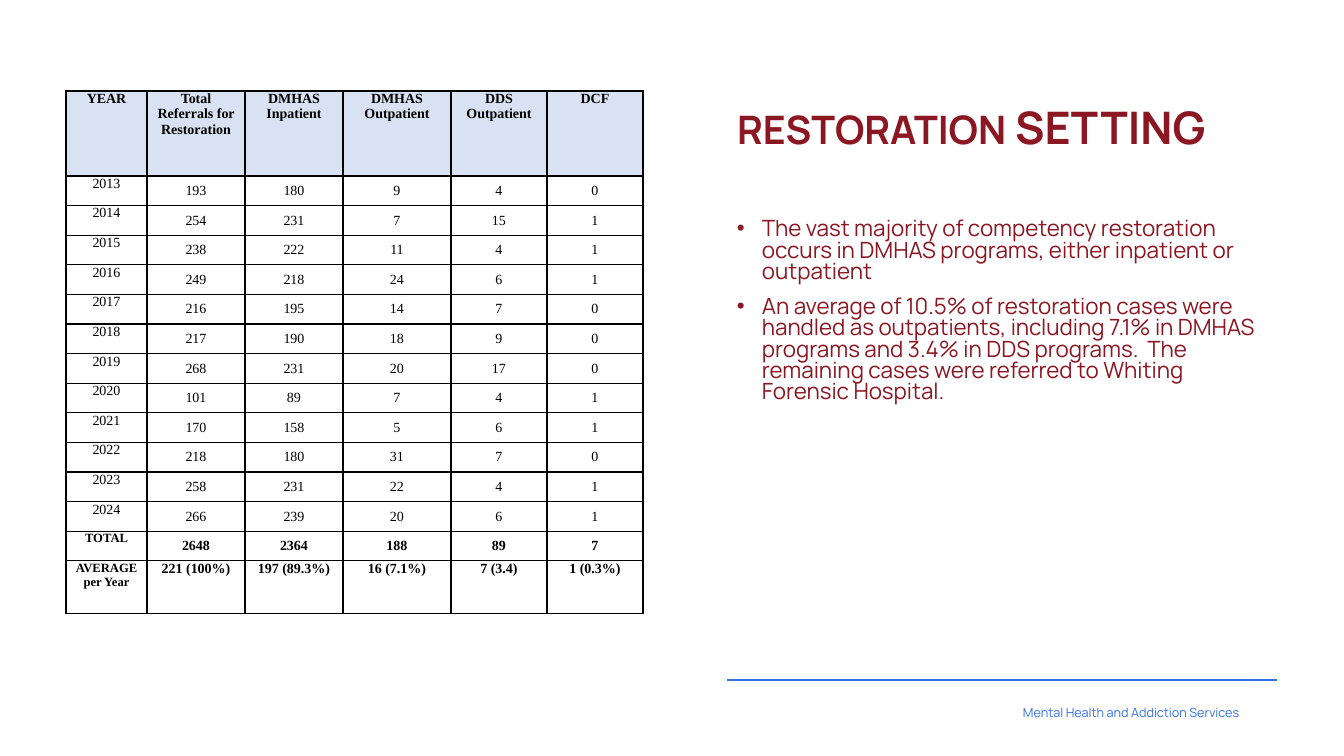
from lxml.etree import SubElement
from pptx import Presentation
from pptx.dml.color import RGBColor
from pptx.enum.shapes import MSO_CONNECTOR
from pptx.enum.text import MSO_ANCHOR, MSO_AUTO_SIZE, PP_ALIGN
from pptx.oxml.ns import qn
from pptx.util import Pt

COLORS = {"maroon": "8B1722", "blue": "3371E7", "black": "000000", "header": "D9E2F3"}
SANS, SERIF = "Manrope", "Times New Roman"

TITLE = [("RESTORATION", 28), (" SETTING", 32)]
BULLETS = [
    "The vast majority of competency restoration occurs in DMHAS programs, "
    "either inpatient or outpatient",
    "An average of 10.5% of restoration cases were handled as outpatients, "
    "including 7.1% in DMHAS programs and 3.4% in DDS programs.  The remaining "
    "cases were referred to Whiting Forensic Hospital.",
]
FOOTER = "Mental Health and Addiction Services"
HEADERS = ["YEAR", "Total Referrals for Restoration", "DMHAS Inpatient",
           "DMHAS Outpatient", "DDS Outpatient", "DCF"]
YEARS = [
    (2013, 193, 180, 9, 4, 0),
    (2014, 254, 231, 7, 15, 1),
    (2015, 238, 222, 11, 4, 1),
    (2016, 249, 218, 24, 6, 1),
    (2017, 216, 195, 14, 7, 0),
    (2018, 217, 190, 18, 9, 0),
    (2019, 268, 231, 20, 17, 0),
    (2020, 101, 89, 7, 4, 1),
    (2021, 170, 158, 5, 6, 1),
    (2022, 218, 180, 31, 7, 0),
    (2023, 258, 231, 22, 4, 1),
    (2024, 266, 239, 20, 6, 1),
]
TOTAL = ("TOTAL", 2648, 2364, 188, 89, 7)
AVERAGE = ("AVERAGE per Year", "221 (100%)", "197 (89.3%)", "16 (7.1%)", "7 (3.4)", "1 (0.3%)")

# Lengths in px
SLIDE = (1344, 756)
TITLE_BOX = (727, 101, 550, 9)
BULLET_BOX = (727, 215, 550, 440)
FOOTER_BOX = (942, 682, 307, 61)
RULE = (727, 680, 1277, 680)
TABLE_LEFT, TABLE_TOP = 66, 91
COLUMN_WIDTHS = [81, 98, 98, 108, 96, 96]
HEADER_HEIGHT, COUNTS_HEIGHT, AVERAGE_HEIGHT = 85, 385, 53
CELL_INSET, BULLET_INDENT = 7, 25


def px(length):
    return round(length * 914400 / 100.8)


def apply(target, formats):
    for name, value in formats.items():
        setattr(target, name, value)


def add_span(para, text, size, color, font=SANS, bold=False):
    span = para.add_run()
    span.text = str(text)
    apply(span.font, {"name": font, "size": Pt(size), "bold": bold})
    span.font.color.rgb = RGBColor.from_string(COLORS[color])


def add_box(page, area, anchor=MSO_ANCHOR.TOP):
    box = page.shapes.add_textbox(*map(px, area))
    apply(box.text_frame, {"word_wrap": True, "vertical_anchor": anchor})
    return box.text_frame


def add_title(page):
    title = page.shapes.title
    apply(title, dict(zip(("left", "top", "width", "height"), map(px, TITLE_BOX))))
    apply(title.text_frame, {"word_wrap": True, "auto_size": MSO_AUTO_SIZE.NONE,
                             "vertical_anchor": MSO_ANCHOR.TOP})
    para = title.text_frame.paragraphs[0]
    apply(para, {"alignment": PP_ALIGN.LEFT, "line_spacing": 0.9, "space_before": Pt(0)})
    for text, size in TITLE:
        add_span(para, text, size, "maroon", bold=True)


def add_bullets(page):
    frame = add_box(page, BULLET_BOX)
    for number, text in enumerate(BULLETS):
        para = frame.add_paragraph() if number else frame.paragraphs[0]
        apply(para, {"line_spacing": 0.79, "space_before": Pt(10 if number else 0)})
        properties = para._p.get_or_add_pPr()
        properties.set("marL", str(px(BULLET_INDENT)))
        properties.set("indent", str(-px(BULLET_INDENT)))
        SubElement(properties, qn("a:buFont"), typeface="Arial")
        SubElement(properties, qn("a:buChar"), char="•")
        add_span(para, text, 16, "maroon")


def add_footer(page):
    rule = page.shapes.add_connector(MSO_CONNECTOR.STRAIGHT, *map(px, RULE))
    rule.line.width = Pt(1.25)
    rule.line.color.rgb = RGBColor.from_string(COLORS["blue"])
    SubElement(rule._element.spPr, qn("a:effectLst"))
    para = add_box(page, FOOTER_BOX, MSO_ANCHOR.MIDDLE).paragraphs[0]
    para.alignment = PP_ALIGN.RIGHT
    add_span(para, FOOTER, 9, "blue")


def add_borders(cell):
    properties = cell._tc.get_or_add_tcPr()
    for side in ("lnL", "lnR", "lnT", "lnB"):
        border = SubElement(properties, qn(f"a:{side}"), w=str(Pt(1)))
        fill = SubElement(border, qn("a:solidFill"))
        SubElement(fill, qn("a:srgbClr"), val=COLORS["black"])


def add_referrals_table(page):
    rows = [HEADERS, *YEARS, TOTAL, AVERAGE]
    last = len(rows) - 1
    count_height = COUNTS_HEIGHT / (last - 1)
    heights = [HEADER_HEIGHT] + [count_height] * (last - 1) + [AVERAGE_HEIGHT]
    table = page.shapes.add_table(
        len(rows), len(HEADERS), px(TABLE_LEFT), px(TABLE_TOP),
        px(sum(COLUMN_WIDTHS)), px(sum(heights))).table
    apply(table, {"first_row": False, "horz_banding": False})
    for column, width in zip(table.columns, COLUMN_WIDTHS):
        column.width = px(width)
    for r, values in enumerate(rows):
        table.rows[r].height = px(heights[r])
        for c, value in enumerate(values):
            cell = table.cell(r, c)
            centred = c > 0 and 0 < r < last
            apply(cell, {
                "margin_left": px(CELL_INSET), "margin_right": px(CELL_INSET),
                "margin_top": 0, "margin_bottom": 0,
                "vertical_anchor": MSO_ANCHOR.MIDDLE if centred else MSO_ANCHOR.TOP})
            add_borders(cell)
            if r == 0:
                cell.fill.solid()
                cell.fill.fore_color.rgb = RGBColor.from_string(COLORS["header"])
            else:
                cell.fill.background()
            para = cell.text_frame.paragraphs[0]
            para.alignment = PP_ALIGN.CENTER
            summary = r >= last - 1
            add_span(para, value, 9 if summary and c == 0 else 10, "black",
                     SERIF, bold=summary or r == 0)


def main():
    deck = Presentation()
    deck.slide_width, deck.slide_height = map(px, SLIDE)
    page = deck.slides.add_slide(deck.slide_layouts[5])
    add_title(page)
    add_footer(page)
    add_bullets(page)
    add_referrals_table(page)
    deck.save("out.pptx")


if __name__ == "__main__":
    main()
